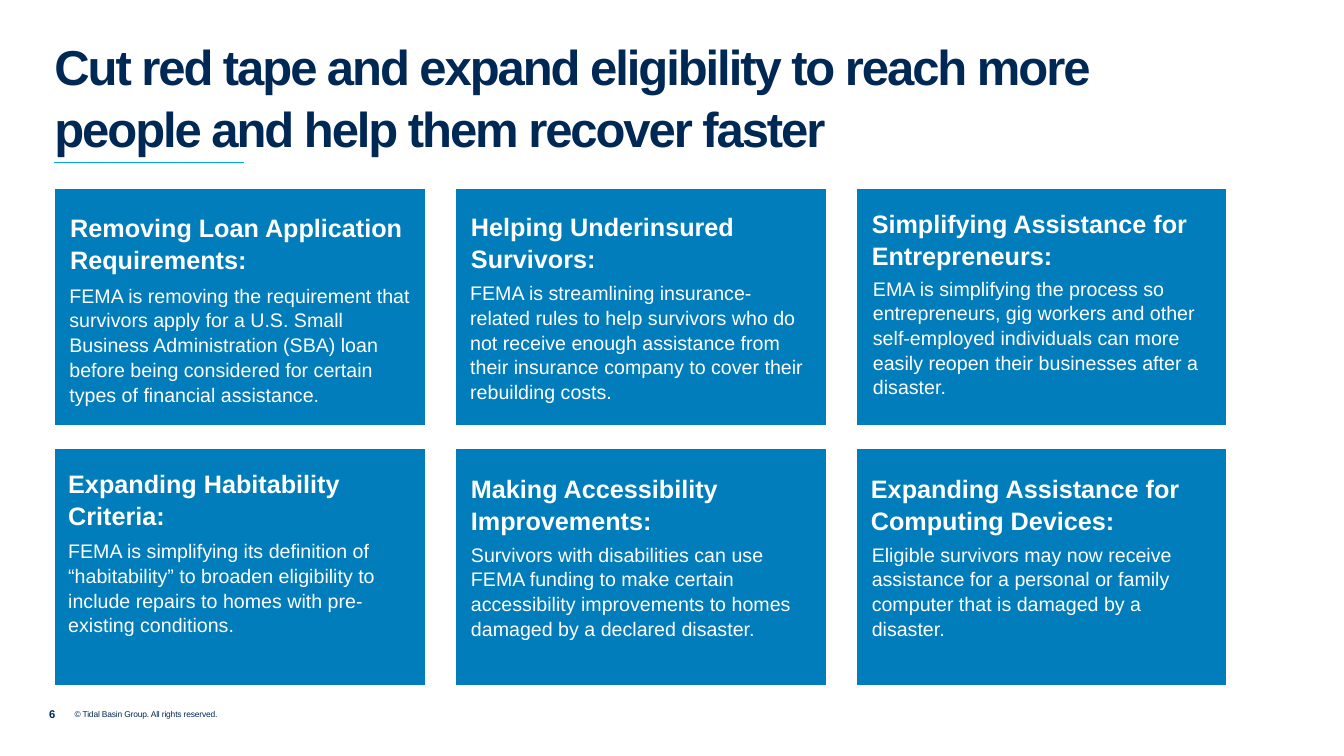
from lxml import etree
from pptx import Presentation
from pptx.dml.color import RGBColor
from pptx.enum.shapes import MSO_CONNECTOR
from pptx.enum.text import MSO_ANCHOR, MSO_AUTO_SIZE, PP_ALIGN
from pptx.oxml.ns import qn
from pptx.util import Cm, Pt

LEFT = PP_ALIGN.LEFT
TOP = MSO_ANCHOR.TOP
NO_FIT = MSO_AUTO_SIZE.NONE
STRAIGHT = MSO_CONNECTOR.STRAIGHT

GRID_LEFT, GRID_TOP = 1.37, 4.75
CARD_WIDTH, CARD_HEIGHT = 9.35, 5.97
COLUMN_STEP, ROW_STEP = 10.1, 6.55
COLUMNS = 3

CARDS = [
    ("Removing Loan Application Requirements:", (0.15, 0.43, 9.35),
     "FEMA is removing the requirement that survivors apply for a U.S. Small Business "
     "Administration (SBA) loan before being considered for certain types of financial "
     "assistance.", (0.13, 2.24, 9.4)),
    ("Helping Underinsured Survivors:", (0.15, 0.41, 8.13),
     "FEMA is streamlining insurance-related rules to help survivors who do not receive "
     "enough assistance from their insurance company to cover their rebuilding costs.",
     (0.13, 2.18, 9.02)),
    ("Simplifying Assistance for Entrepreneurs:", (0.15, 0.33, 9.35),
     "EMA is simplifying the process so entrepreneurs, gig workers and other self-employed "
     "individuals can more easily reopen their businesses after a disaster.",
     (0.18, 2.06, 9.14)),
    ("Expanding Habitability Criteria:", (0.1, 0.33, 9.35),
     "FEMA is simplifying its definition of “habitability” to broaden eligibility to "
     "include repairs to homes with pre-existing conditions.", (0.1, 2.13, 9.14)),
    ("Making Accessibility Improvements:", (0.15, 0.46, 9.25),
     "Survivors with disabilities can use FEMA funding to make certain accessibility "
     "improvements to homes damaged by a declared disaster.", (0.15, 2.21, 9.14)),
    ("Expanding Assistance for Computing Devices:", (0.13, 0.46, 9.25),
     "Eligible survivors may now receive assistance for a personal or family computer "
     "that is damaged by a disaster.", (0.15, 2.21, 9.14)),
]


def colour(value):
    return RGBColor.from_string(value)


class SlideBuilder:
    font = "Arial"
    navy = "002855"
    blue = "007DBA"
    cyan = "00A9E0"
    white = "FFFFFF"
    line_spacing = 1.05

    def __init__(self, page):
        self.page = page

    def fill_text(self, shape, text, size, shade, bold=False, tracking=0, margins=(0, 0),
                  spacing=1.0):
        frame = shape.text_frame
        frame.word_wrap = True
        frame.auto_size = NO_FIT
        frame.vertical_anchor = TOP
        frame.margin_left = frame.margin_right = Cm(margins[0])
        frame.margin_top = frame.margin_bottom = Cm(margins[1])
        para = frame.paragraphs[0]
        para.alignment = LEFT
        para.line_spacing = spacing
        para.space_before = Pt(0)
        span = para.add_run()
        span.text = text
        para.font.name = self.font
        para.font.size = Pt(size)
        para.font.bold = bold
        para.font.color.rgb = colour(shade)
        if tracking:
            span._r.get_or_add_rPr().set("spc", str(round(tracking * 100)))

    def title(self, text, left, top, width, height):
        box = self.page.shapes.title
        box.left, box.top, box.width, box.height = Cm(left), Cm(top), Cm(width), Cm(height)
        self.fill_text(box, text, 35, self.navy, True, -1.5, spacing=self.line_spacing)

    def text(self, text, left, top, width, height, size, shade, **style):
        box = self.page.shapes.add_textbox(Cm(left), Cm(top), Cm(width), Cm(height))
        self.fill_text(box, text, size, shade, **style)

    def rule(self, left, top, length):
        line = self.page.shapes.add_connector(
            STRAIGHT, Cm(left), Cm(top), Cm(left + length), Cm(top))
        line.line.color.rgb = colour(self.cyan)
        line.line.width = Pt(0.75)
        etree.SubElement(line._element.spPr, qn("a:effectLst"))

    def panel(self, left, top):
        table = self.page.shapes.add_table(
            1, 1, Cm(left), Cm(top), Cm(CARD_WIDTH), Cm(CARD_HEIGHT)).table
        table.first_row = False
        table.horz_banding = False
        cell = table.cell(0, 0)
        properties = cell._tc.get_or_add_tcPr()
        for side in ("a:lnL", "a:lnR", "a:lnT", "a:lnB"):
            border = etree.SubElement(properties, qn(side), w=str(Pt(1)))
            fill = etree.SubElement(border, qn("a:solidFill"))
            etree.SubElement(fill, qn("a:srgbClr"), val=self.white)
        cell.fill.solid()
        cell.fill.fore_color.rgb = colour(self.blue)

    def card(self, left, top, heading, heading_place, body, body_place):
        self.panel(left, top)
        for text, place, height, size, bold in (
            (heading, heading_place, 1.8, 18, True),
            (body, body_place, 3.25, 14, False),
        ):
            across, down, width = place
            self.text(text, left + across, top + down, width, height, size, self.white,
                      bold=bold, margins=(0.25, 0.13), spacing=self.line_spacing)


def main():
    deck = Presentation()
    deck.slide_width, deck.slide_height = Cm(33.87), Cm(19.05)
    builder = SlideBuilder(deck.slides.add_slide(deck.slide_layouts[5]))
    builder.title("Cut red tape and expand eligibility to reach more people and help them "
                  "recover faster", GRID_LEFT, 0.84, 26.16, 3.43)
    builder.rule(GRID_LEFT, 4.09, 4.78)
    for index, card in enumerate(CARDS):
        row, column = divmod(index, COLUMNS)
        builder.card(GRID_LEFT + column * COLUMN_STEP, GRID_TOP + row * ROW_STEP, *card)
    builder.text("6", 1.24, 17.83, 0.6, 1.37, 8, builder.navy, bold=True)
    builder.text("© Tidal Basin Group. All rights reserved.", 1.88, 17.88, 7.06, 1.14, 6,
                 builder.navy, tracking=-0.1)
    deck.save("out.pptx")


if __name__ == "__main__":
    main()
